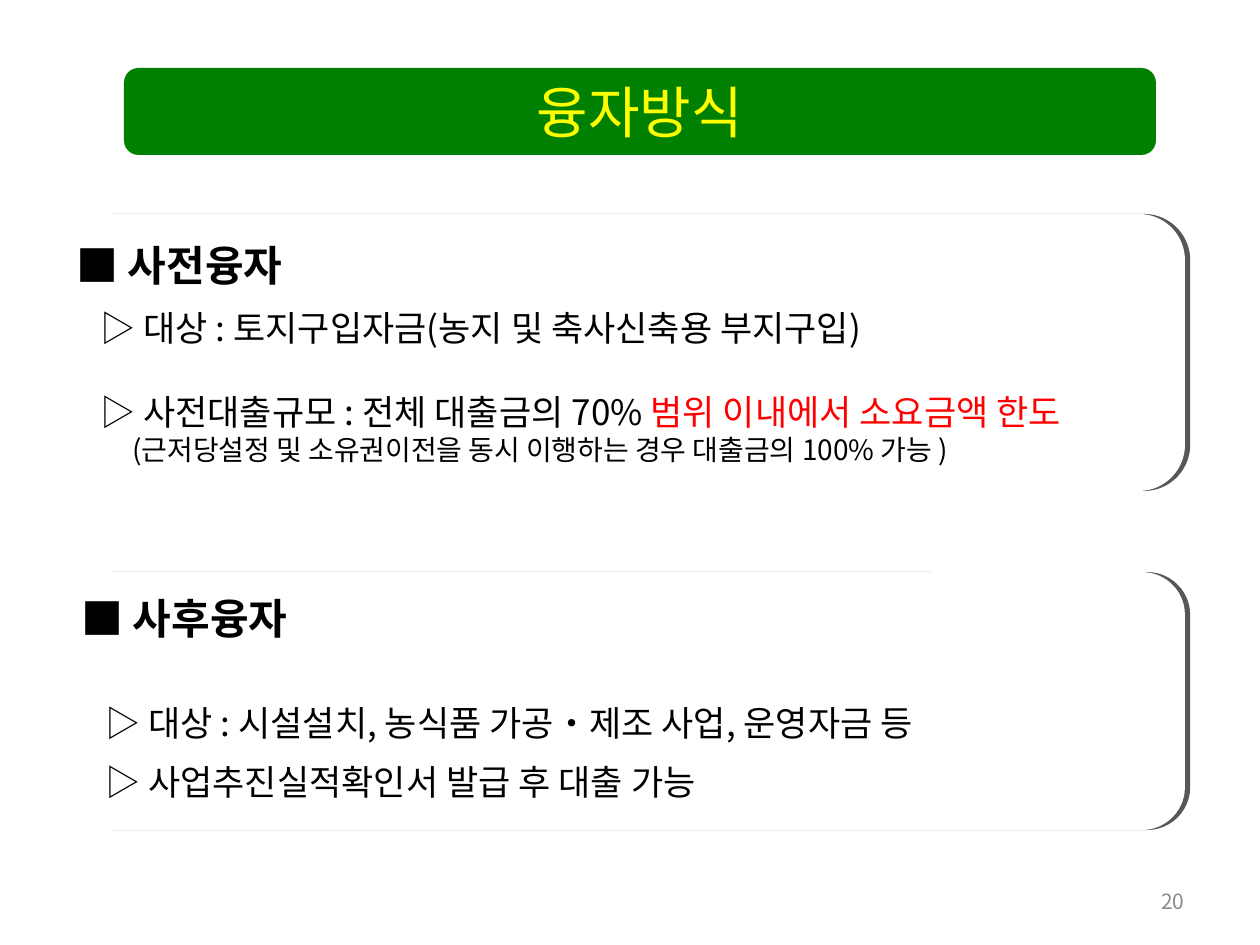
from dataclasses import dataclass

from lxml.etree import SubElement
from pptx import Presentation
from pptx.dml.color import RGBColor
from pptx.enum.shapes import MSO_SHAPE as Preset
from pptx.enum.text import MSO_ANCHOR as Anchor, PP_ALIGN as Align
from pptx.oxml.ns import qn
from pptx.util import Emu, Pt

EMU_PER_PX = 914400 / 126
FONT = "Noto Sans CJK KR"
BLACK, WHITE, RED = "000000", "FFFFFF", "FF0000"
GREEN, YELLOW, GREY = "008000", "FFFF00", "8C8C8C"
LINE_HEIGHT = 1.2
GAP = 9.6


@dataclass(frozen=True)
class Box:
    left: int
    top: int
    width: int
    height: int


@dataclass(frozen=True)
class Line:
    phrases: tuple[tuple[str, str], ...]
    size: int = 20
    bold: bool = False
    indent: int = 24
    before: float = 0
    spacing: int = 1


@dataclass(frozen=True)
class Section:
    panel: Box
    body: Box
    lines: tuple[Line, ...]


def px(length: int) -> Emu:
    return Emu(round(length * EMU_PER_PX))


def color(value: str) -> RGBColor:
    return RGBColor.from_string(value)


def place(box: Box) -> tuple[Emu, ...]:
    return px(box.left), px(box.top), px(box.width), px(box.height)


def style_run(run, size: int, hue: str, bold: bool = False) -> None:
    run.font.size = Pt(size)
    run.font.bold = bold
    run.font.name = FONT
    run.font.color.rgb = color(hue)
    SubElement(run.font._element, qn("a:ea")).set("typeface", FONT)


def add_panel(slide, box: Box, fill: str):
    panel = slide.shapes.add_shape(Preset.ROUNDED_RECTANGLE, *place(box))
    panel.shadow.inherit = False
    panel.fill.solid()
    panel.fill.fore_color.rgb = color(fill)
    panel.line.fill.background()
    return panel


def add_side_shadow(panel) -> None:
    effects = panel._element.spPr.find(qn("a:effectLst"))
    shadow = SubElement(effects, qn("a:outerShdw"), blurRad="0",
                        dist=str(Pt(3)), dir="0", algn="l", rotWithShape="0")
    shade = SubElement(shadow, qn("a:srgbClr"), val=BLACK)
    SubElement(shade, qn("a:alpha"), val="65000")


def write_single(shape, text: str, size: int, hue: str, align: Align) -> None:
    frame = shape.text_frame
    frame.word_wrap = True
    frame.vertical_anchor = Anchor.MIDDLE
    frame.text = text
    frame.paragraphs[0].alignment = align
    style_run(frame.paragraphs[0].runs[0], size, hue)


def write_lines(slide, box: Box, lines: tuple[Line, ...]) -> None:
    frame = slide.shapes.add_textbox(*place(box)).text_frame
    frame.word_wrap = True
    frame.vertical_anchor = Anchor.MIDDLE
    for index, line in enumerate(lines):
        paragraph = frame.add_paragraph() if index else frame.paragraphs[0]
        paragraph.line_spacing = Pt(line.size * LINE_HEIGHT * line.spacing)
        paragraph.space_before = Pt(line.before)
        paragraph._p.get_or_add_pPr().set("marL", str(px(line.indent)))
        for text, hue in line.phrases:
            run = paragraph.add_run()
            run.text = text
            style_run(run, line.size, hue, line.bold)


def heading(text: str) -> Line:
    return Line(((text, BLACK),), size=24, bold=True, indent=0)


SECTIONS = (
    Section(Box(64, 572, 1121, 258), Box(69, 535, 1132, 325), (
        heading("■ 사후융자"),
        Line((("▷ 대상 : 시설설치, 농식품 가공•제조 사업, 운영자금 등", BLACK),),
             before=GAP, spacing=2),
        Line((("▷ 사업추진실적확인서 발급 후 대출 가능", BLACK),), before=GAP),
    )),
    Section(Box(64, 214, 1121, 277), Box(64, 230, 1132, 246), (
        heading("■ 사전융자"),
        Line((("▷ 대상 : 토지구입자금(농지 및 축사신축용 부지구입)", BLACK),),
             before=GAP),
        Line((("▷ 사전대출규모 : 전체 대출금의 70% ", BLACK),
              ("범위 이내에서 소요금액 한도", RED)), spacing=2),
        Line((("(근저당설정 및 소유권이전을 동시 이행하는 경우 대출금의 100% 가능 )",
               BLACK),), size=16, indent=56),
    )),
)


def main() -> None:
    deck = Presentation()
    deck.slide_width, deck.slide_height = px(1260), px(945)
    slide = deck.slides.add_slide(deck.slide_layouts[6])
    for section in SECTIONS:
        add_side_shadow(add_panel(slide, section.panel, WHITE))
    title = add_panel(slide, Box(124, 68, 1032, 87), GREEN)
    write_single(title, "융자방식", 32, YELLOW, Align.CENTER)
    for section in reversed(SECTIONS):
        write_lines(slide, section.body, section.lines)
    page_number = slide.shapes.add_textbox(*place(Box(903, 876, 294, 50)))
    write_single(page_number, "20", 12, GREY, Align.RIGHT)
    deck.save("out.pptx")


if __name__ == "__main__":
    main()
